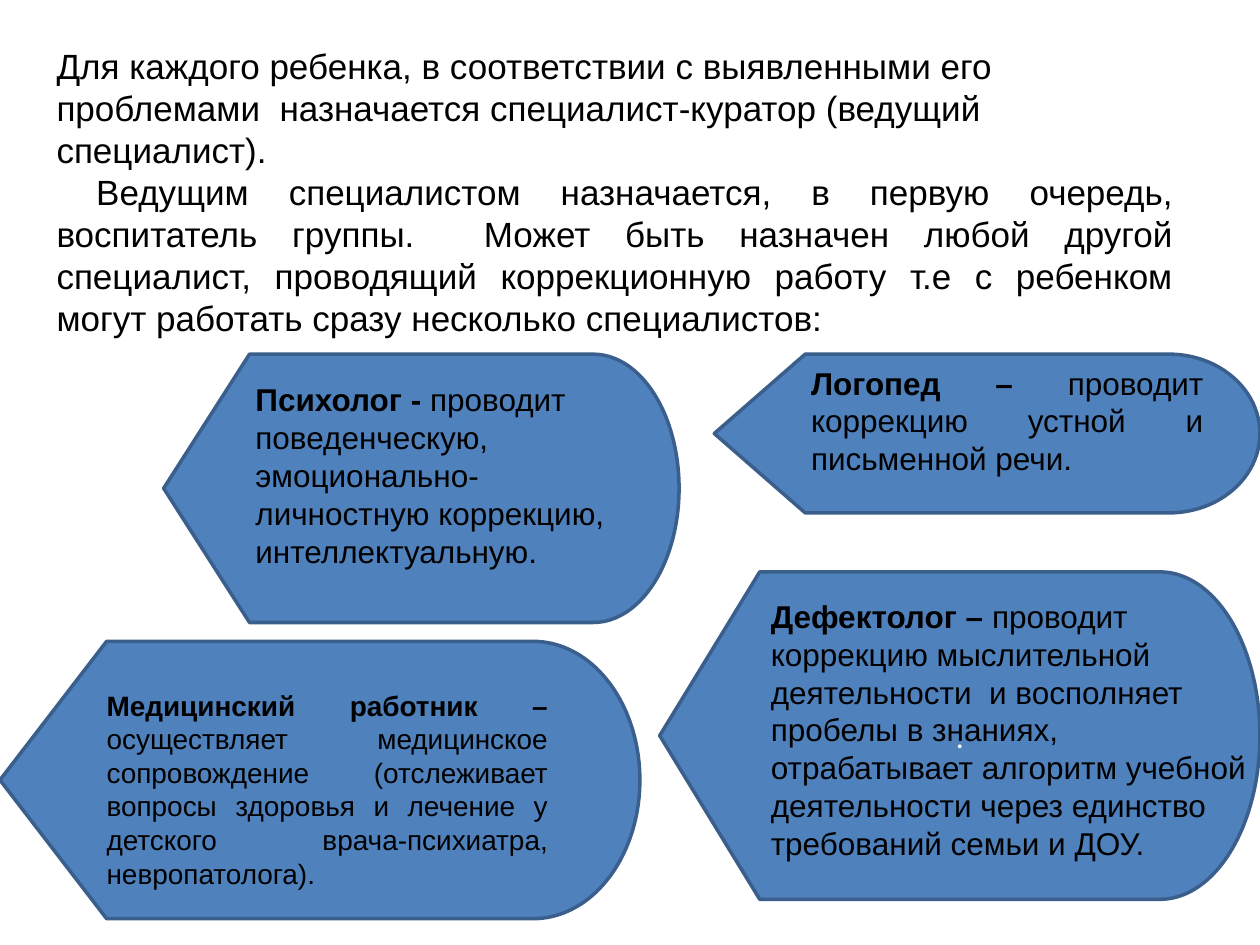
from dataclasses import dataclass
from typing import Any

from pptx import Presentation
from pptx.dml.color import RGBColor
from pptx.enum.shapes import MSO_SHAPE
from pptx.enum.text import MSO_ANCHOR, PP_ALIGN
from pptx.util import Cm, Pt

DISPLAY = MSO_SHAPE.FLOWCHART_DISPLAY
MIDDLE, TOP = MSO_ANCHOR.MIDDLE, MSO_ANCHOR.TOP
LEFT, CENTER, JUSTIFY = PP_ALIGN.LEFT, PP_ALIGN.CENTER, PP_ALIGN.JUSTIFY

BLACK = RGBColor(0x00, 0x00, 0x00)
WHITE = RGBColor(0xFF, 0xFF, 0xFF)
BLUE = RGBColor(0x4F, 0x81, 0xBD)
DARK_BLUE = RGBColor(0x3A, 0x5F, 0x8C)


@dataclass(frozen=True)
class Box:
    left: float
    top: float
    width: float
    height: float

    def lengths(self) -> tuple[Cm, Cm, Cm, Cm]:
        return Cm(self.left), Cm(self.top), Cm(self.width), Cm(self.height)


@dataclass(frozen=True)
class Specialist:
    name: str
    duty: str
    outline: Box
    text: Box
    size: int = 18
    alignment: Any = LEFT
    anchor: Any = MIDDLE
    mark: str = ""


INTRO_BOX = Box(0.89, 0.74, 23.01, 6.25)
INTRO = "Для каждого ребенка, в соответствии с выявленными его проблемами  назначается специалист-куратор (ведущий специалист)."
LEADER = "Ведущим специалистом назначается, в первую очередь, воспитатель группы.  Может быть назначен любой другой специалист, проводящий коррекционную работу т.е с ребенком могут работать сразу несколько специалистов:"
LEADER_INDENT = Cm(0.8)

SPECIALISTS = [
    Specialist(
        "Психолог - ",
        "проводит поведенческую, эмоционально-личностную коррекцию, интеллектуальную.",
        Box(3.3, 7.14, 10.39, 5.41), Box(4.9, 7.52, 8, 4.11),
    ),
    Specialist(
        "Логопед – ",
        "проводит коррекцию устной и письменной речи.",
        Box(14.4, 7.14, 11, 3.2), Box(16.1, 7.19, 8.41, 2.57),
        alignment=JUSTIFY,
    ),
    Specialist(
        "Медицинский работник – ",
        "осуществляет медицинское сопровождение (отслеживает вопросы здоровья и лечение у детского врача-психиатра, невропатолога).",
        Box(0, 12.93, 12.9, 5.59), Box(1.9, 13.72, 9.4, 4.37),
        size=16, alignment=JUSTIFY,
    ),
    Specialist(
        "Дефектолог – ",
        "проводит коррекцию мыслительной деятельности  и восполняет пробелы в знаниях, отрабатывает алгоритм учебной деятельности через единство требований семьи и ДОУ.",
        Box(13.3, 11.53, 12.1, 6.6), Box(15.29, 11.91, 10.11, 5.64),
        anchor=TOP, mark=".",
    ),
]


def add_run(paragraph: Any, text: str, size: int, bold: bool = False,
            name: str = "Arial", color: RGBColor = BLACK) -> None:
    run = paragraph.add_run()
    run.text = text
    for attribute, value in {"name": name, "size": Pt(size), "bold": bold}.items():
        setattr(run.font, attribute, value)
    run.font.color.rgb = color


def add_text_frame(slide: Any, box: Box, anchor: Any) -> Any:
    text_frame = slide.shapes.add_textbox(*box.lengths()).text_frame
    for attribute, value in {"word_wrap": True, "vertical_anchor": anchor}.items():
        setattr(text_frame, attribute, value)
    return text_frame


def add_intro(slide: Any) -> None:
    text_frame = add_text_frame(slide, INTRO_BOX, MIDDLE)
    add_run(text_frame.paragraphs[0], INTRO, 20)
    leader = text_frame.add_paragraph()
    leader.alignment = JUSTIFY
    leader._p.get_or_add_pPr().set("indent", str(LEADER_INDENT))
    add_run(leader, LEADER, 20)


def add_specialist(slide: Any, specialist: Specialist) -> None:
    shape = slide.shapes.add_shape(DISPLAY, *specialist.outline.lengths())
    shape.shadow.inherit = False
    shape.fill.solid()
    shape.fill.fore_color.rgb = BLUE
    shape.line.color.rgb = DARK_BLUE
    shape.line.width = Pt(2)
    if specialist.mark:
        shape.text_frame.vertical_anchor = MIDDLE
        mark = shape.text_frame.paragraphs[0]
        mark.alignment = CENTER
        add_run(mark, specialist.mark, 18, name="Calibri", color=WHITE)

    text_frame = add_text_frame(slide, specialist.text, specialist.anchor)
    paragraph = text_frame.paragraphs[0]
    paragraph.alignment = specialist.alignment
    add_run(paragraph, specialist.name, specialist.size, bold=True)
    add_run(paragraph, specialist.duty, specialist.size)


def main() -> None:
    presentation = Presentation()
    presentation.slide_width = Cm(25.4)
    presentation.slide_height = Cm(19.05)
    slide = presentation.slides.add_slide(presentation.slide_layouts[6])
    add_intro(slide)
    for specialist in SPECIALISTS:
        add_specialist(slide, specialist)
    presentation.save("out.pptx")


if __name__ == "__main__":
    main()
